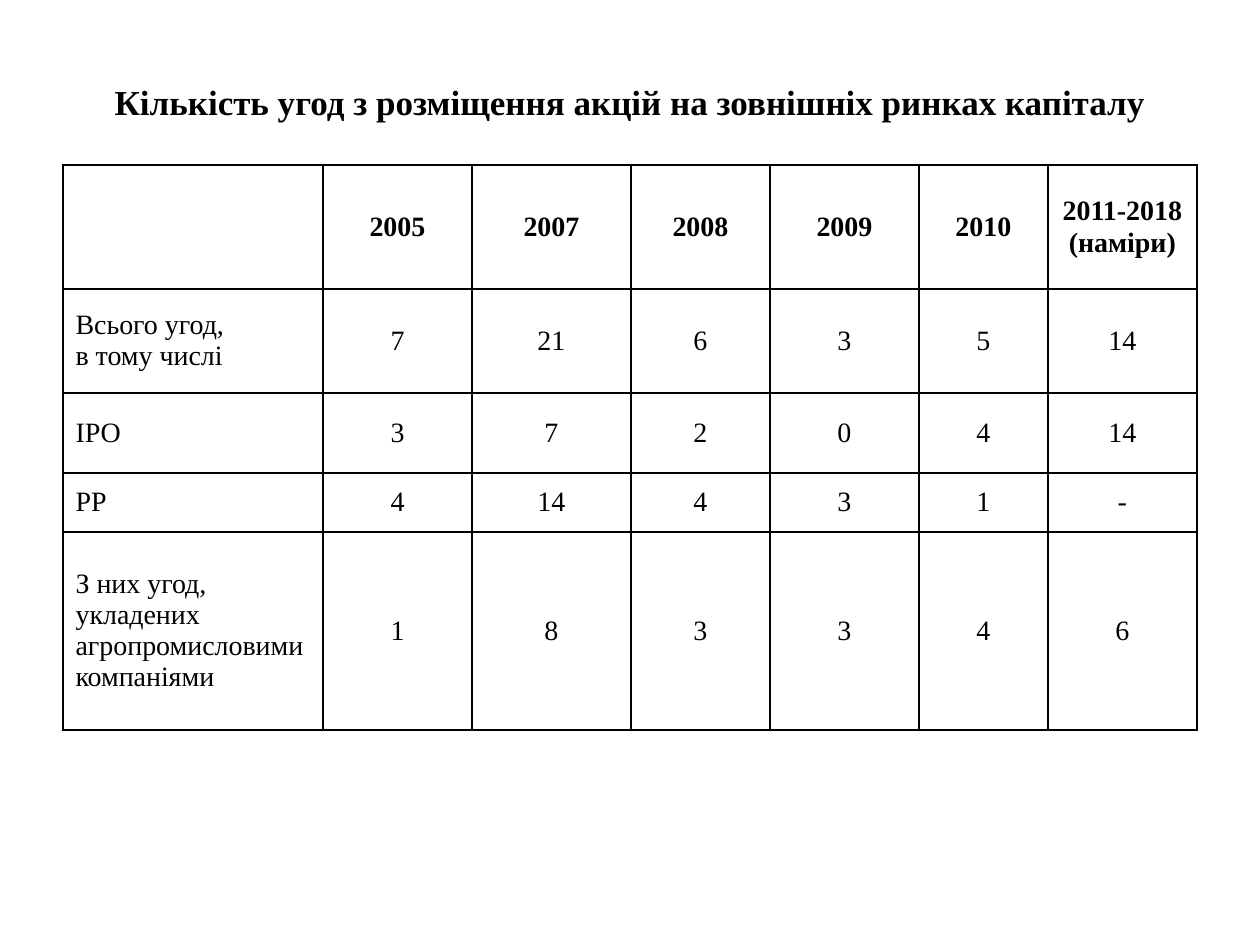
from lxml.etree import SubElement
from pptx import Presentation
from pptx.dml.color import RGBColor
from pptx.enum.text import MSO_ANCHOR, PP_ALIGN
from pptx.oxml.ns import qn
from pptx.util import Pt

PX = 914400 // 126
FONT = "Times New Roman"
COLORS = {"text": "000000", "border": "000000"}

TITLE = "Кількість угод з розміщення акцій на зовнішніх ринках капіталу"
COL_WIDTHS = [260, 149, 159, 139, 149, 129, 149]
ROW_HEIGHTS = [124, 104, 80, 59, 198]
DEALS = [
    ["", "2005", "2007", "2008", "2009", "2010", "2011-2018 (наміри)"],
    ["Всього угод,\nв тому числі", "7", "21", "6", "3", "5", "14"],
    ["ІРО", "3", "7", "2", "0", "4", "14"],
    ["РР", "4", "14", "4", "3", "1", "-"],
    ["З них угод, укладених агропромисловими компаніями",
     "1", "8", "3", "3", "4", "6"],
]


def px(*values):
    return [v * PX for v in values]


def set_text(tf, text, size, bold, align):
    tf.text = text
    tf.word_wrap = True
    for p in tf.paragraphs:
        p.alignment = align
        p.font.size = Pt(size)
        for r in p.runs:
            r.font.name = FONT
            r.font.size = Pt(size)
            r.font.bold = bold
            r.font.color.rgb = RGBColor.from_string(COLORS["text"])


def set_borders(cell):
    """Draw a 1 pt line on all four sides; call before setting the fill."""
    tc_pr = cell._tc.get_or_add_tcPr()
    for side in ("lnL", "lnR", "lnT", "lnB"):
        ln = SubElement(tc_pr, qn(f"a:{side}"), w=str(Pt(1)))
        fill = SubElement(ln, qn("a:solidFill"))
        SubElement(fill, qn("a:srgbClr"), val=COLORS["border"])


def add_title(s):
    tf = s.shapes.add_textbox(*px(63, 38, 1134, 127)).text_frame
    set_text(tf, TITLE, 20, True, PP_ALIGN.CENTER)
    tf.vertical_anchor = MSO_ANCHOR.MIDDLE


def add_deals_table(s):
    frame = s.shapes.add_table(
        len(DEALS), len(COL_WIDTHS),
        *px(63, 165, sum(COL_WIDTHS), sum(ROW_HEIGHTS)))
    table = frame.table
    table.horz_banding = False
    for col, width in zip(table.columns, px(*COL_WIDTHS)):
        col.width = width
    for row, height in zip(table.rows, px(*ROW_HEIGHTS)):
        row.height = height
    for i, values in enumerate(DEALS):
        for j, value in enumerate(values):
            cell = table.cell(i, j)
            set_borders(cell)
            cell.fill.background()
            cell.vertical_anchor = MSO_ANCHOR.MIDDLE
            align = PP_ALIGN.CENTER if j else PP_ALIGN.LEFT
            set_text(cell.text_frame, value, 16, i == 0, align)


def main():
    prs = Presentation()
    prs.slide_width, prs.slide_height = px(1260, 945)
    s = prs.slides.add_slide(prs.slide_layouts[6])
    add_title(s)
    add_deals_table(s)
    prs.save("out.pptx")


if __name__ == "__main__":
    main()
